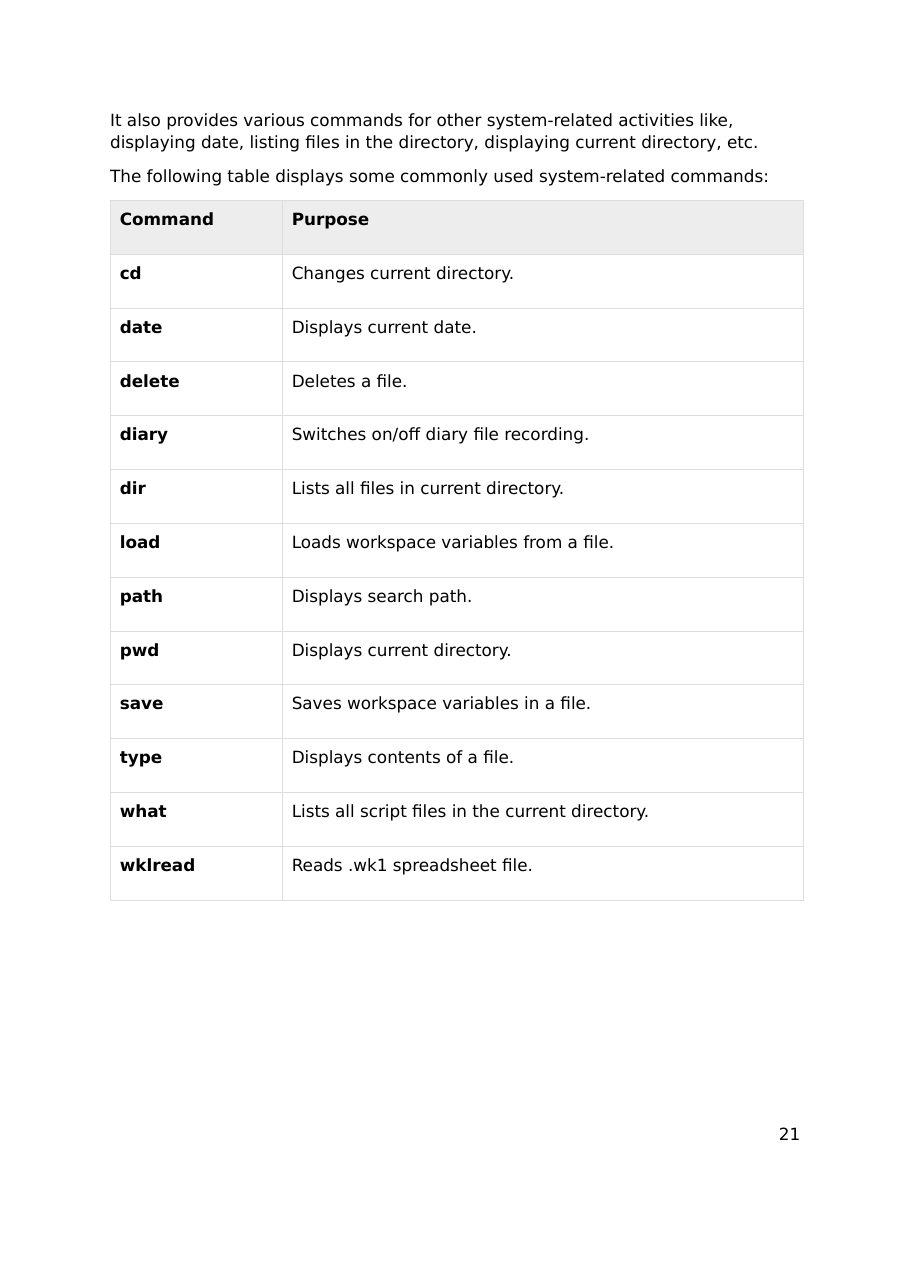
from pptx import Presentation
from pptx.dml.color import RGBColor
from pptx.oxml import parse_xml
from pptx.oxml.ns import nsdecls
from pptx.util import Pt


def add_run(p, text, bold=False, spacing=-3):
    r = p.add_run()
    r.text = text
    r.font.name = "DejaVu Sans"
    r.font.size = Pt(11)
    r.font.bold = bold
    r.font.color.rgb = RGBColor.from_string("000000")
    r._r.get_or_add_rPr().set("spc", str(spacing))


def add_text_box(left, top, width, height, inset):
    tf = s.shapes.add_textbox(Pt(left), Pt(top), Pt(width), Pt(height)).text_frame
    tf.word_wrap = True
    tf.margin_left = tf.margin_right = tf.margin_bottom = 0
    tf.margin_top = Pt(inset)
    return tf


intro = [
    "It also provides various commands for other system-related activities like, "
    "displaying date, listing files in the directory, displaying current directory, etc.",
    "The following table displays some commonly used system-related commands:",
]
commands = [
    ("Command", "Purpose"),
    ("cd", "Changes current directory."),
    ("date", "Displays current date."),
    ("delete", "Deletes a file."),
    ("diary", "Switches on/off diary file recording."),
    ("dir", "Lists all files in current directory."),
    ("load", "Loads workspace variables from a file."),
    ("path", "Displays search path."),
    ("pwd", "Displays current directory."),
    ("save", "Saves workspace variables in a file."),
    ("type", "Displays contents of a file."),
    ("what", "Lists all script files in the current directory."),
    ("wklread", "Reads .wk1 spreadsheet file."),
]
column_widths = [112.4, 340.8]
row_height = 35.2

prs = Presentation()
prs.slide_width, prs.slide_height = Pt(594.72), Pt(841.68)
s = prs.slides.add_slide(prs.slide_layouts[6])

tf = add_text_box(72, 69.84, 453.6, 53.3, 1)
for i, text in enumerate(intro):
    p = tf.add_paragraph() if i else tf.paragraphs[0]
    if i:
        p.space_before = Pt(9.2)
    else:
        p.line_spacing = 1.08
    add_run(p, text)

table = s.shapes.add_table(
    len(commands), 2, Pt(72), Pt(131), Pt(sum(column_widths)), Pt(row_height * len(commands))
).table
table.first_row = table.horz_banding = False
for column, width in zip(table.columns, column_widths):
    column.width = Pt(width)

for i, row in enumerate(commands):
    table.rows[i].height = Pt(row_height)
    for j, text in enumerate(row):
        cell = table.cell(i, j)
        cell.margin_left, cell.margin_top = Pt(6.3), Pt(6.2)
        cell.margin_right = cell.margin_bottom = 0
        add_run(cell.text_frame.paragraphs[0], text, bold=i == 0 or j == 0)
        tcPr = cell._tc.get_or_add_tcPr()
        for side in ("lnL", "lnR", "lnT", "lnB"):
            tcPr.append(parse_xml(
                f'<a:{side} {nsdecls("a")} w="9525"><a:solidFill>'
                f'<a:srgbClr val="DDDDDD"/></a:solidFill></a:{side}>'
            ))
        if i == 0:
            cell.fill.solid()
            cell.fill.fore_color.rgb = RGBColor.from_string("EDEDED")
        else:
            cell.fill.background()

tf = add_text_box(500.4, 733.2, 25.2, 15.1, 1.4)
tf.margin_left = Pt(8.6)
add_run(tf.paragraphs[0], "21", spacing=0)

prs.save("out.pptx")
